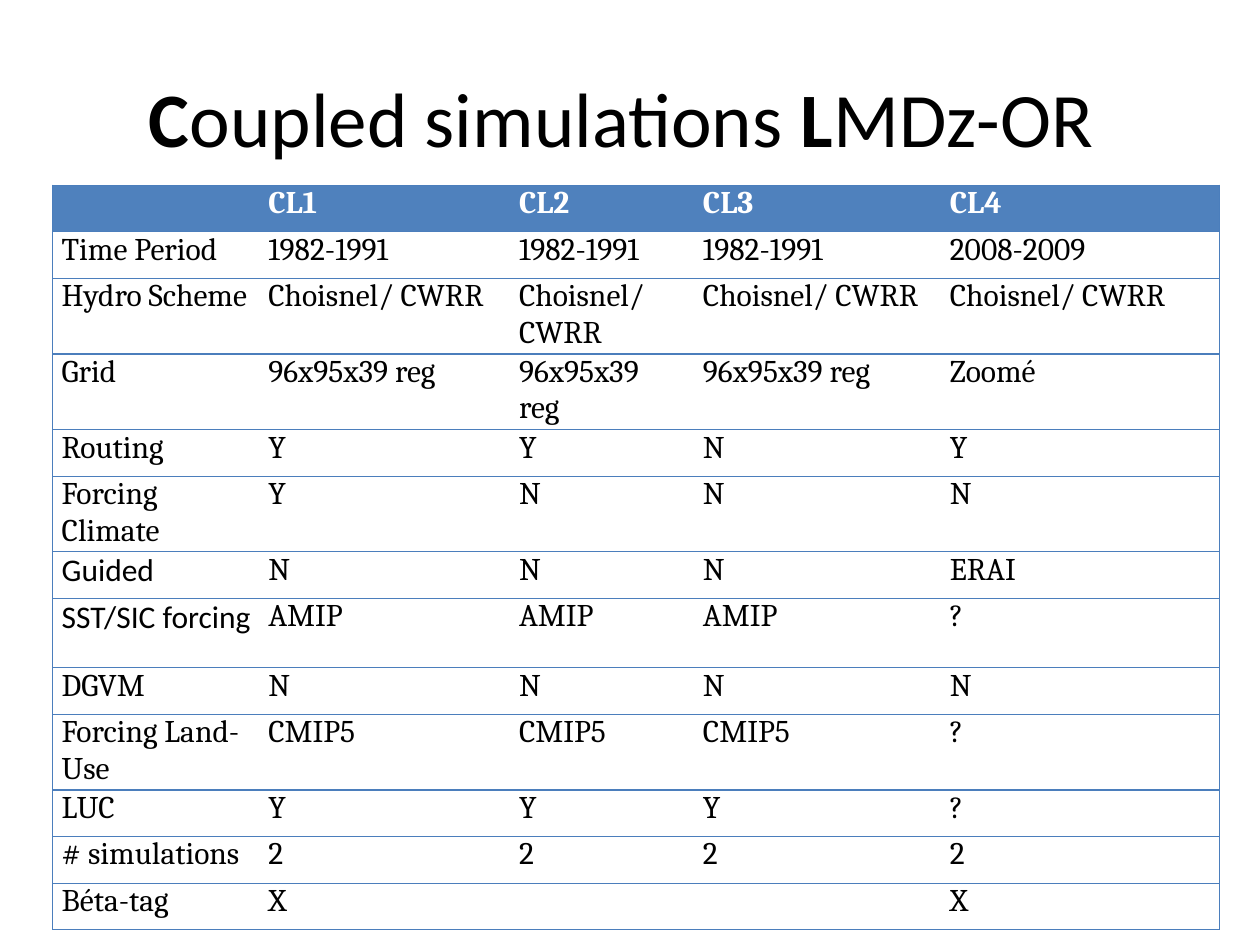
from lxml import etree
from pptx import Presentation
from pptx.dml.color import RGBColor
from pptx.enum import text
from pptx.oxml.ns import qn
from pptx.util import Inches, Pt

BLACK, WHITE, HEADER_BLUE, RULE_BLUE = "000000", "FFFFFF", "4F81BD", "4B7EBC"
COLUMN_WIDTHS = [1.64, 1.99, 1.46, 1.96, 2.21]
SINGLE_LINE, DOUBLE_LINE = 0.37, 0.55
TALL_ROWS = {"Hydro Scheme", "Grid", "Forcing Climate", "SST/SIC forcing"}
CALIBRI_LABELS = {"Guided", "SST/SIC forcing"}
SIMULATIONS = [
    ["", "CL1", "CL2", "CL3", "CL4"],
    ["Time Period"] + ["1982-1991"] * 3 + ["2008-2009"],
    ["Hydro Scheme"] + ["Choisnel/ CWRR"] * 4,
    ["Grid"] + ["96x95x39 reg"] * 3 + ["Zoomé"],
    ["Routing", "Y", "Y", "N", "Y"],
    ["Forcing Climate", "Y", "N", "N", "N"],
    ["Guided", "N", "N", "N", "ERAI"],
    ["SST/SIC forcing", "AMIP", "AMIP", "AMIP", "?"],
    ["DGVM"] + ["N"] * 4,
    ["Forcing Land-Use", "CMIP5", "CMIP5", "CMIP5", "?"],
    ["LUC", "Y", "Y", "Y", "?"],
    ["# simulations"] + ["2"] * 4,
    ["Béta-tag", "X", "", "", "X"],
]


def color(value):
    return RGBColor.from_string(value)


def add_span(para, words, size, font, shade, bold=False):
    span = para.add_run()
    span.text = words
    span.font.size = Pt(size)
    span.font.name = font
    span.font.bold = bold
    span.font.color.rgb = color(shade)


def add_title(page, left, top, width, height):
    box = page.shapes.add_textbox(Inches(left), Inches(top), Inches(width), Inches(height))
    frame = box.text_frame
    frame.word_wrap = True
    frame.vertical_anchor = text.MSO_ANCHOR.MIDDLE
    para = frame.paragraphs[0]
    para.alignment = text.PP_ALIGN.CENTER
    for words, bold in [("C", True), ("oupled simulations ", False),
                        ("L", True), ("MDz-OR ", False)]:
        add_span(para, words, 44, "Calibri", BLACK, bold)


def set_borders(cell, visible):
    """Rule the sides named in visible (of L, R, T, B) and clear the others."""
    properties = cell._tc.get_or_add_tcPr()
    for side in "LRTB":
        line = etree.SubElement(properties, qn(f"a:ln{side}"), w=str(Pt(0.75)))
        if side in visible:
            fill = etree.SubElement(line, qn("a:solidFill"))
            etree.SubElement(fill, qn("a:srgbClr"), val=RULE_BLUE)
        else:
            etree.SubElement(line, qn("a:noFill"))


def fill_cell(cell, words, font, is_header, borders):
    cell.margin_left = cell.margin_right = Inches(0.07)
    cell.margin_top = cell.margin_bottom = 0
    set_borders(cell, borders)
    if is_header:
        cell.fill.solid()
        cell.fill.fore_color.rgb = color(HEADER_BLUE)
    else:
        cell.fill.background()
    if words:
        shade = WHITE if is_header else BLACK
        add_span(cell.text_frame.paragraphs[0], words, 18, font, shade, is_header)


def add_simulation_table(page, left, top, width, height):
    last = len(COLUMN_WIDTHS) - 1
    frame = page.shapes.add_table(len(SIMULATIONS), len(COLUMN_WIDTHS), Inches(left),
                                  Inches(top), Inches(width), Inches(height))
    table = frame.table
    table.horz_banding = False
    for column, column_width in zip(table.columns, COLUMN_WIDTHS):
        column.width = Inches(column_width)
    for row_index, values in enumerate(SIMULATIONS):
        row = table.rows[row_index]
        row.height = Inches(DOUBLE_LINE if values[0] in TALL_ROWS else SINGLE_LINE)
        for column_index, words in enumerate(values):
            borders = "TB" + {0: "L", last: "R"}.get(column_index, "")
            font = "Calibri" if words in CALIBRI_LABELS else "Cambria"
            fill_cell(row.cells[column_index], words, font, row_index == 0, borders)


def main():
    deck = Presentation()
    deck.slide_width, deck.slide_height = Inches(10), Inches(7.5)
    page = deck.slides.add_slide(deck.slide_layouts[6])
    add_title(page, 0.5, 0.3, 9, 1.25)
    add_simulation_table(page, 0.42, 1.47, 9.25, 5.95)
    deck.save("out.pptx")


if __name__ == "__main__":
    main()
